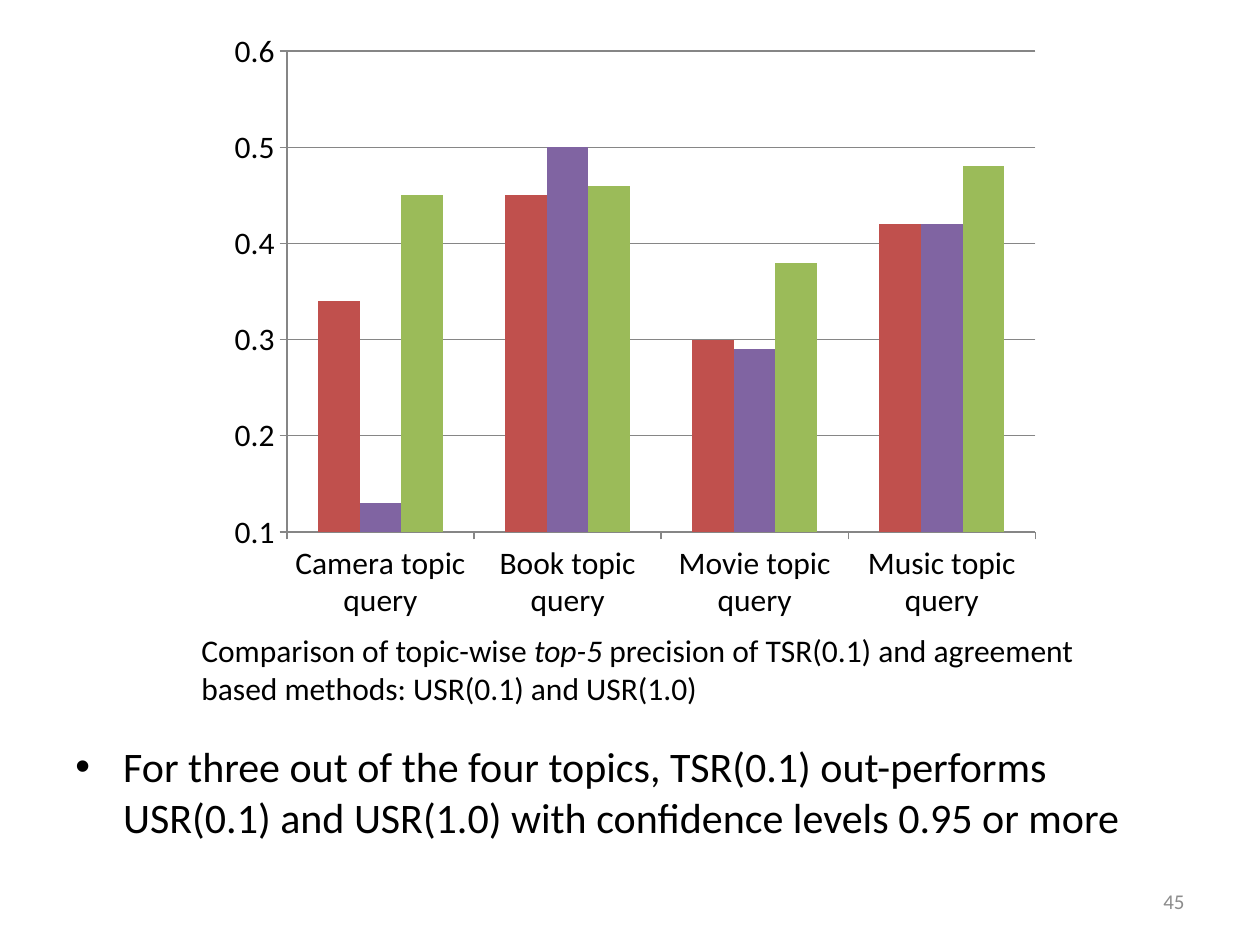
from lxml.etree import SubElement
from pptx import Presentation
from pptx.chart.data import CategoryChartData
from pptx.dml.color import RGBColor
from pptx.enum.chart import XL_CHART_TYPE, XL_TICK_MARK
from pptx.enum.text import MSO_ANCHOR, PP_ALIGN
from pptx.oxml import parse_xml
from pptx.oxml.ns import nsdecls, qn
from pptx.util import Inches, Pt

FONT = "Calibri"
BLACK = RGBColor(0x00, 0x00, 0x00)
GRAY = RGBColor(0x8C, 0x8C, 0x8C)
AXIS_GRAY = RGBColor(0x86, 0x86, 0x86)
RED = RGBColor(0xC0, 0x50, 0x4D)
PURPLE = RGBColor(0x80, 0x64, 0xA2)
GREEN = RGBColor(0x9B, 0xBB, 0x59)

presentation = Presentation()
presentation.slide_width = Inches(10)
presentation.slide_height = Inches(7.5)
slide = presentation.slides.add_slide(presentation.slide_layouts[6])


def add_text(runs, left, top, width, height, size, color=BLACK,
             align=PP_ALIGN.LEFT, anchor=MSO_ANCHOR.TOP):
    """Add a one-paragraph text box from (text, italic) runs; return the paragraph."""
    box = slide.shapes.add_textbox(Inches(left), Inches(top), Inches(width), Inches(height))
    frame = box.text_frame
    frame.word_wrap = True
    frame.vertical_anchor = anchor
    paragraph = frame.paragraphs[0]
    paragraph.alignment = align
    for text, italic in runs:
        run = paragraph.add_run()
        run.text = text
        run.font.name = FONT
        run.font.size = Pt(size)
        run.font.italic = italic
        run.font.color.rgb = color
    return paragraph


# Page number, caption and bullet
add_text([("45", False)], 7.17, 6.95, 2.33, 0.4, size=12, color=GRAY,
         align=PP_ALIGN.RIGHT, anchor=MSO_ANCHOR.MIDDLE)
add_text([("Comparison of topic-wise ", False),
          ("top-5 ", True),
          ("precision of TSR(0.1) and agreement based methods: USR(0.1) and USR(1.0)", False)],
         1.5, 4.96, 7.33, 0.71, size=18)
finding = add_text([("For three out of the four topics, TSR(0.1) out-performs USR(0.1) and "
                     "USR(1.0) with confidence levels 0.95 or more", False)],
                   0.5, 5.83, 9, 1.5, size=24)
finding.space_before = Pt(4.8)
properties = finding._p.get_or_add_pPr()
properties.set("marL", str(Inches(0.38)))
properties.set("indent", str(Inches(-0.38)))
SubElement(properties, qn("a:buFont"), typeface="Arial")
SubElement(properties, qn("a:buChar"), char="•")

# Precision chart
precision = {
    "USR(0.1)": (RED, (0.34, 0.45, 0.3, 0.42)),
    "USR(1.0)": (PURPLE, (0.13, 0.5, 0.29, 0.42)),
    "TSR(0.1)": (GREEN, (0.45, 0.46, 0.38, 0.48)),
}
chart_data = CategoryChartData()
chart_data.categories = [f"{topic} topic query" for topic in ("Camera", "Book", "Movie", "Music")]
for name, (color, values) in precision.items():
    chart_data.add_series(name, values)
chart = slide.shapes.add_chart(XL_CHART_TYPE.COLUMN_CLUSTERED, Inches(1.67), Inches(0.17),
                               Inches(6.75), Inches(4.75), chart_data).chart
chart.has_title = False
chart.has_legend = False
chart.font.name = FONT
chart.font.size = Pt(18)
chart.font.color.rgb = BLACK

plot = chart.plots[0]
plot.vary_by_categories = False
plot.gap_width = 150
plot.overlap = 0
for series, (color, values) in zip(plot.series, precision.values()):
    series.format.fill.solid()
    series.format.fill.fore_color.rgb = color
    series.invert_if_negative = False

value_axis = chart.value_axis
value_axis.minimum_scale = 0.1
value_axis.maximum_scale = 0.6
value_axis.major_unit = 0.1
value_axis.has_major_gridlines = True
value_axis.tick_labels.number_format = "General"
value_axis.tick_labels.number_format_is_linked = False
for axis in (value_axis, chart.category_axis):
    axis.major_tick_mark = XL_TICK_MARK.OUTSIDE
    axis.minor_tick_mark = XL_TICK_MARK.NONE
    axis.tick_labels.font.size = Pt(18)
for part in (value_axis, chart.category_axis, value_axis.major_gridlines):
    part.format.line.color.rgb = AXIS_GRAY
    part.format.line.width = Pt(0.75)

# Fixed inner plot area, as shares of the chart
plot_area = chart._chartSpace.chart.plotArea
for layout in plot_area.findall(qn("c:layout")):
    plot_area.remove(layout)
modes = '<c:layoutTarget val="inner"/><c:xMode val="edge"/><c:yMode val="edge"/>'
shares = "".join(f'<c:{key} val="{share}"/>'
                 for key, share in zip("xywh", (0.09, 0.05, 0.88, 0.81)))
plot_area.insert(0, parse_xml(f'<c:layout {nsdecls("c")}><c:manualLayout>{modes}{shares}'
                              '</c:manualLayout></c:layout>'))

presentation.save("out.pptx")
